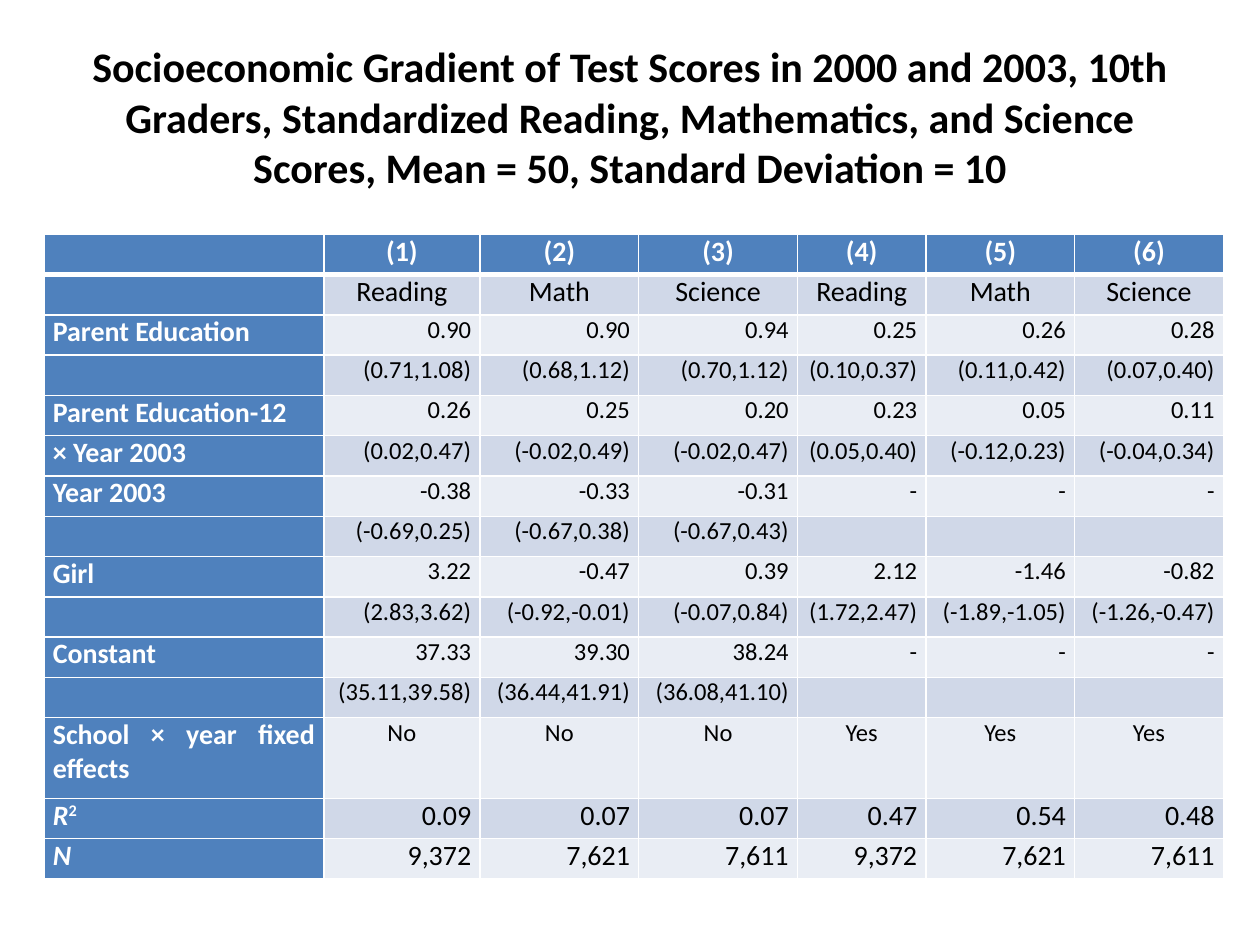
import dataclasses

import lxml.etree
import pptx
import pptx.dml.color
import pptx.enum.text
import pptx.oxml.ns
import pptx.util

PX = 9144  # 100 px to the inch
ALIGN = pptx.enum.text.PP_ALIGN


@dataclasses.dataclass(frozen=True)
class Theme:
    font: str = "Calibri"
    black: str = "000000"
    white: str = "FFFFFF"
    accent: str = "4F81BD"
    dark_band: str = "D0D8E8"
    light_band: str = "E9EDF4"
    title_size: int = 24
    large_size: int = 16
    small_size: int = 14
    thin_line: int = 1
    thick_line: int = 3


THEME = Theme()
TITLE = ("Socioeconomic Gradient of Test Scores in 2000 and 2003, 10th Graders, "
         "Standardized Reading, Mathematics, and Science Scores, "
         "Mean = 50, Standard Deviation = 10")
COLUMN_WIDTHS = [222, 124, 126, 126, 102, 118, 118]
ROW_HEIGHT = 32
TALL_ROWS = {12}
CELL_MARGINS = {"margin_left": 7, "margin_right": 7, "margin_top": 0, "margin_bottom": 0}

# Kind of row: alignment and size of its values
ROW_KINDS = {
    "heading": (ALIGN.CENTER, THEME.large_size),
    "estimate": (ALIGN.RIGHT, THEME.small_size),
    "choice": (ALIGN.CENTER, THEME.small_size),
    "summary": (ALIGN.RIGHT, THEME.large_size),
}
ROWS = [
    ("heading", "", ["(1)", "(2)", "(3)", "(4)", "(5)", "(6)"]),
    ("heading", "", ["Reading", "Math", "Science"] * 2),
    ("estimate", "Parent Education", ["0.90", "0.90", "0.94", "0.25", "0.26", "0.28"]),
    ("estimate", "", ["(0.71,1.08)", "(0.68,1.12)", "(0.70,1.12)",
                      "(0.10,0.37)", "(0.11,0.42)", "(0.07,0.40)"]),
    ("estimate", "Parent Education-12", ["0.26", "0.25", "0.20", "0.23", "0.05", "0.11"]),
    ("estimate", "× Year 2003", ["(0.02,0.47)", "(-0.02,0.49)", "(-0.02,0.47)",
                                 "(0.05,0.40)", "(-0.12,0.23)", "(-0.04,0.34)"]),
    ("estimate", "Year 2003", ["-0.38", "-0.33", "-0.31", "-", "-", "-"]),
    ("estimate", "", ["(-0.69,0.25)", "(-0.67,0.38)", "(-0.67,0.43)", "", "", ""]),
    ("estimate", "Girl", ["3.22", "-0.47", "0.39", "2.12", "-1.46", "-0.82"]),
    ("estimate", "", ["(2.83,3.62)", "(-0.92,-0.01)", "(-0.07,0.84)",
                      "(1.72,2.47)", "(-1.89,-1.05)", "(-1.26,-0.47)"]),
    ("estimate", "Constant", ["37.33", "39.30", "38.24", "-", "-", "-"]),
    ("estimate", "", ["(35.11,39.58)", "(36.44,41.91)", "(36.08,41.10)", "", "", ""]),
    ("choice", "School × year fixed effects", ["No"] * 3 + ["Yes"] * 3),
    ("summary", "R2", ["0.09", "0.07", "0.07", "0.47", "0.54", "0.48"]),
    ("summary", "N", ["9,372", "7,621", "7,611"] * 2),
]


def set_attributes(target, values):
    for name, value in values.items():
        setattr(target, name, value)


def add_run(paragraph, text, color, **formats):
    run = paragraph.add_run()
    run.text = text
    set_attributes(run.font, {"name": THEME.font, **formats})
    run.font.color.rgb = pptx.dml.color.RGBColor.from_string(color)
    return run


def add_title(slide):
    title = slide.shapes.title
    set_attributes(title, {"left": 50 * PX, "top": 30 * PX,
                           "width": 900 * PX, "height": 125 * PX})
    set_attributes(title.text_frame, {
        "word_wrap": True,
        "auto_size": pptx.enum.text.MSO_AUTO_SIZE.NONE,
        "vertical_anchor": pptx.enum.text.MSO_ANCHOR.MIDDLE,
    })
    paragraph = title.text_frame.paragraphs[0]
    paragraph.alignment = ALIGN.CENTER
    add_run(paragraph, TITLE, THEME.black, size=pptx.util.Pt(THEME.title_size), bold=True)


def set_borders(cell, row_index):
    """White lines all round, thick between the header and the body."""
    properties = cell._tc.get_or_add_tcPr()
    thick_side = {0: "lnB", 1: "lnT"}.get(row_index)
    qn = pptx.oxml.ns.qn
    for position, side in enumerate(("lnL", "lnR", "lnT", "lnB")):
        points = THEME.thick_line if side == thick_side else THEME.thin_line
        line = lxml.etree.Element(qn(f"a:{side}"), w=str(pptx.util.Pt(points)))
        fill = lxml.etree.SubElement(line, qn("a:solidFill"))
        lxml.etree.SubElement(fill, qn("a:srgbClr"), val=THEME.white)
        properties.insert(position, line)


def format_cell(cell, row_index, is_label):
    set_attributes(cell, {name: px * PX for name, px in CELL_MARGINS.items()})
    band = THEME.dark_band if row_index % 2 else THEME.light_band
    color = THEME.accent if is_label or row_index == 0 else band
    cell.fill.solid()
    cell.fill.fore_color.rgb = pptx.dml.color.RGBColor.from_string(color)
    set_borders(cell, row_index)


def write_label(cell, kind, label):
    paragraph = cell.text_frame.paragraphs[0]
    is_symbol = kind == "summary"
    paragraph.alignment = ALIGN.LEFT if is_symbol else ALIGN.JUSTIFY
    formats = {"size": pptx.util.Pt(THEME.large_size), "bold": True}
    name, exponent = (label[:1], label[1:]) if is_symbol else (label, "")
    if name:
        add_run(paragraph, name, THEME.white, italic=is_symbol, **formats)
    if exponent:
        run = add_run(paragraph, exponent, THEME.white, **formats)
        run.font._rPr.set("baseline", "30000")


def write_value(cell, kind, value, is_header):
    paragraph = cell.text_frame.paragraphs[0]
    paragraph.alignment, size = ROW_KINDS[kind]
    if value:
        color = THEME.white if is_header else THEME.black
        add_run(paragraph, value, color, size=pptx.util.Pt(size), bold=is_header)


def add_results_table(slide):
    heights = [ROW_HEIGHT * (2 if index in TALL_ROWS else 1) for index in range(len(ROWS))]
    table = slide.shapes.add_table(
        len(ROWS), len(COLUMN_WIDTHS), 35 * PX, 186 * PX,
        sum(COLUMN_WIDTHS) * PX, sum(heights) * PX).table
    for column, width in zip(table.columns, COLUMN_WIDTHS):
        column.width = width * PX
    for row_index, (kind, label, values) in enumerate(ROWS):
        row = table.rows[row_index]
        row.height = heights[row_index] * PX
        label_cell, *value_cells = row.cells
        format_cell(label_cell, row_index, True)
        write_label(label_cell, kind, label)
        for cell, value in zip(value_cells, values):
            format_cell(cell, row_index, False)
            write_value(cell, kind, value, row_index == 0)


def main():
    presentation = pptx.Presentation()
    set_attributes(presentation, {"slide_width": 1000 * PX, "slide_height": 750 * PX})
    title_only = presentation.slide_layouts[5]
    slide = presentation.slides.add_slide(title_only)
    add_title(slide)
    add_results_table(slide)
    presentation.save("out.pptx")


if __name__ == "__main__":
    main()
